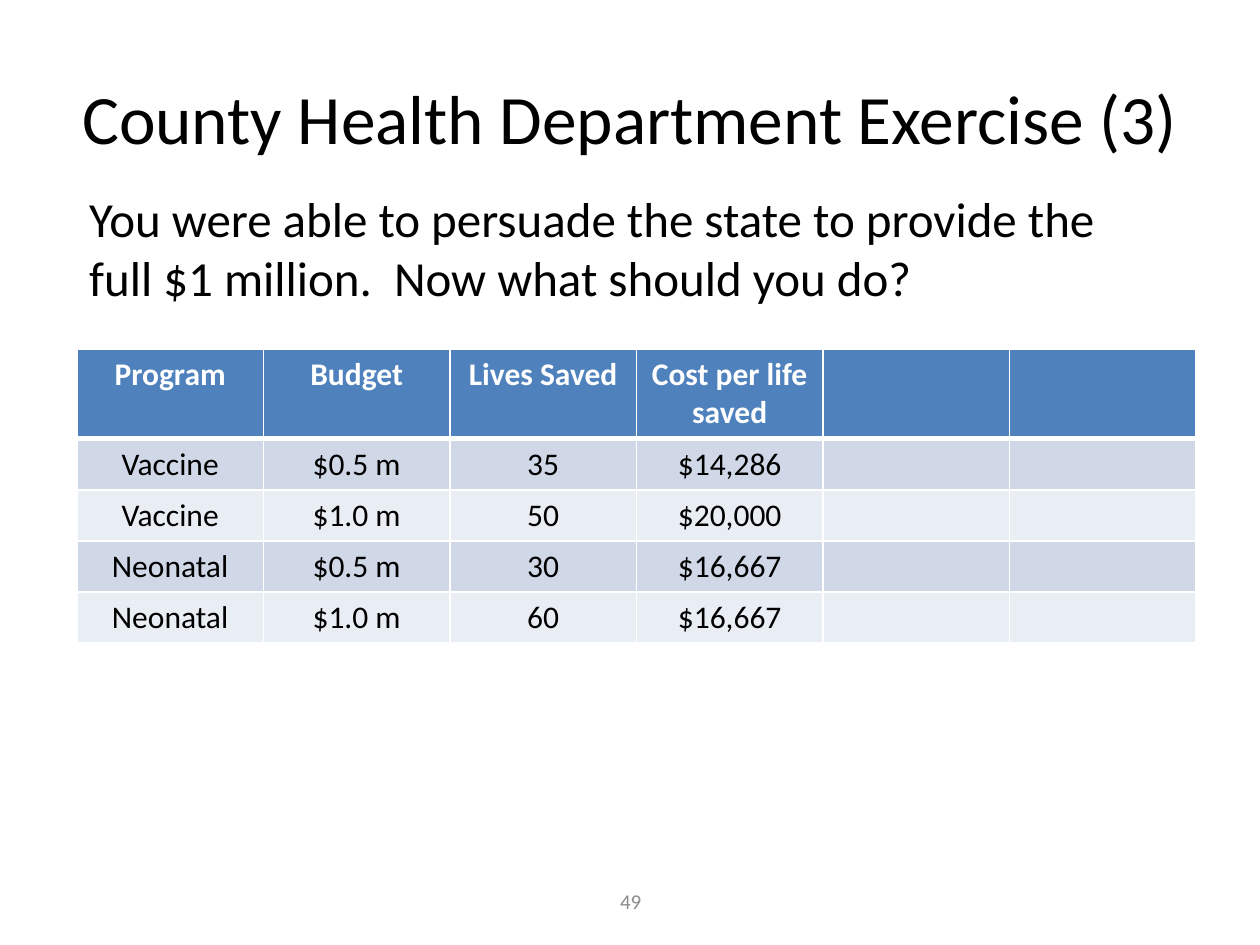
from lxml import etree
from pptx import Presentation
from pptx import util as u
from pptx.dml.color import RGBColor
from pptx.enum import text
from pptx.oxml import ns

COLORS = {
    "black": "000000",
    "white": "FFFFFF",
    "header": "4F81BD",
    "band_dark": "D0D8E8",
    "band_light": "E9EDF4",
    "number": "8C8C8C",
}


def write(tf, content, size=18, color="black", bold=False, align=text.PP_ALIGN.CENTER):
    p = tf.paragraphs[0]
    p.alignment = align
    r = p.add_run()
    r.text = content
    r.font.name = "Calibri"
    r.font.size = u.Pt(size)
    r.font.bold = bold
    r.font.color.rgb = RGBColor.from_string(COLORS[color])


def add_border(cell, side, width):
    ln = etree.SubElement(cell._tc.get_or_add_tcPr(), ns.qn(f"a:{side}"), w=str(u.Pt(width)))
    fill = etree.SubElement(ln, ns.qn("a:solidFill"))
    etree.SubElement(fill, ns.qn("a:srgbClr"), val=COLORS["white"])


prs = Presentation()
prs.slide_width, prs.slide_height = u.Cm(25.4), u.Cm(19.05)
s = prs.slides.add_slide(prs.slide_layouts[5])

title = s.shapes.title
title.left, title.top = u.Cm(1.27), u.Cm(0.76)
title.width, title.height = u.Cm(22.86), u.Cm(3.18)
title.text_frame.auto_size = text.MSO_AUTO_SIZE.NONE
title.text_frame.vertical_anchor = text.MSO_ANCHOR.MIDDLE
write(title.text_frame, "County Health Department Exercise (3)", size=39.6)

rows = [
    ["Program", "Budget", "Lives Saved", "Cost per life saved", "", ""],
    ["Vaccine", "$0.5 m", "35", "$14,286", "", ""],
    ["Vaccine", "$1.0 m", "50", "$20,000", "", ""],
    ["Neonatal", "$0.5 m", "30", "$16,667", "", ""],
    ["Neonatal", "$1.0 m", "60", "$16,667", "", ""],
]
header_height, row_height = u.Cm(1.78), u.Cm(1.03)
table = s.shapes.add_table(
    len(rows), len(rows[0]), u.Cm(1.55), u.Cm(7.04), u.Cm(22.56),
    header_height + row_height * (len(rows) - 1),
).table

for i, row in enumerate(rows):
    is_header = i == 0
    table.rows[i].height = header_height if is_header else row_height
    fill = "header" if is_header else ("band_dark" if i % 2 else "band_light")
    for j, value in enumerate(row):
        cell = table.cell(i, j)
        for side in ("lnL", "lnR", "lnT", "lnB"):
            thick = (i, side) in ((0, "lnB"), (1, "lnT"))
            add_border(cell, side, 3 if thick else 1)
        cell.fill.solid()
        cell.fill.fore_color.rgb = RGBColor.from_string(COLORS[fill])
        if value:
            write(cell.text_frame, value, color="white" if is_header else "black", bold=is_header)

number = s.shapes.add_textbox(u.Cm(8.69), u.Cm(17.65), u.Cm(8.05), u.Cm(1.02))
number.text_frame.word_wrap = True
number.text_frame.vertical_anchor = text.MSO_ANCHOR.MIDDLE
write(number.text_frame, "49", size=12, color="number")

question = s.shapes.add_textbox(u.Cm(1.55), u.Cm(3.68), u.Cm(21.82), u.Cm(2.64))
question.text_frame.word_wrap = True
question.text_frame.auto_size = text.MSO_AUTO_SIZE.SHAPE_TO_FIT_TEXT
write(
    question.text_frame,
    "You were able to persuade the state to provide the full $1 million.  Now what should you do?",
    size=28, align=text.PP_ALIGN.LEFT,
)

prs.save("out.pptx")
